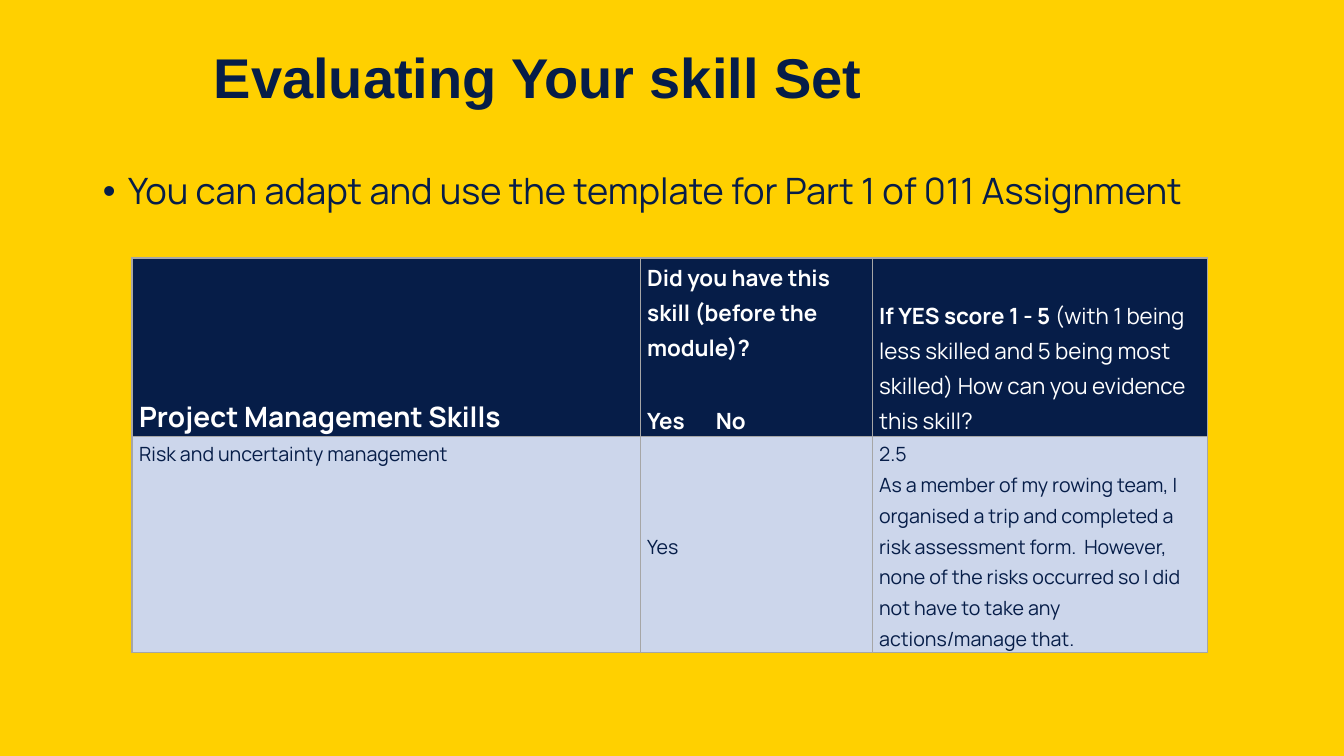
from lxml import etree
from pptx import Presentation
from pptx.dml.color import RGBColor
from pptx.enum.text import MSO_ANCHOR, MSO_AUTO_SIZE, PP_ALIGN
from pptx.oxml.ns import qn
from pptx.util import Inches, Pt

TOP, MIDDLE, BOTTOM = MSO_ANCHOR.TOP, MSO_ANCHOR.MIDDLE, MSO_ANCHOR.BOTTOM
LEFT = PP_ALIGN.LEFT
NO_FIT = MSO_AUTO_SIZE.NONE

COLORS = {
    "background": "FFD000",
    "navy": "061D48",
    "body": "071D49",
    "white": "FFFFFF",
    "row": "CCD6EB",
    "border": "A6A6A6",
}

# Each cell: anchor, size, paragraphs; each paragraph: (text, bold) runs
HEADER = [
    (BOTTOM, 20, [[("Project Management Skills", True)]]),
    (BOTTOM, 16, [[("Did you have this skill (before the module)?", True)],
                  [("Yes\tNo", True)]]),
    (BOTTOM, 16, [[("If YES score 1 - 5 ", True),
                   ("(with 1 being less skilled and 5 being most skilled) "
                    "How can you evidence this skill?", False)]]),
]
RISK_ROW = [
    (TOP, 14, [[("Risk and uncertainty management", False)]]),
    (MIDDLE, 14, [[("Yes", False)]]),
    (MIDDLE, 14, [[("2.5", False)],
                  [("As a member of my rowing team, I organised a trip and "
                    "completed a risk assessment form.  However, none of the "
                    "risks occurred so I did not have to take any "
                    "actions/manage that.", False)]]),
]


def rgb(name):
    return RGBColor.from_string(COLORS[name])


class SlideBuilder:
    """Holds the current slide and the style of its elements."""

    title_font = "Arial"
    text_font = "Manrope"

    def __init__(self, s):
        self.s = s
        s.background.fill.solid()
        s.background.fill.fore_color.rgb = rgb("background")

    def style(self, r, font, size, color, bold=False):
        r.font.name = font
        r.font.size = Pt(size)
        r.font.bold = bold
        r.font.color.rgb = rgb(color)

    def placeholder(self, sp, text, box, anchor):
        """Move and fill a placeholder; return its paragraph."""
        sp.left, sp.top, sp.width, sp.height = map(Inches, box)
        tf = sp.text_frame
        tf.text = text
        tf.auto_size = NO_FIT
        tf.vertical_anchor = anchor
        p = tf.paragraphs[0]
        p.alignment = LEFT
        p.line_spacing = 0.9
        p.space_before = Pt(0)
        return p

    def title(self, text, box):
        p = self.placeholder(self.s.shapes.title, text, box, MIDDLE)
        self.style(p.runs[0], self.title_font, 40, "navy", True)

    def bullet(self, text, box):
        p = self.placeholder(self.s.placeholders[1], text, box, TOP)
        pPr = p._p.get_or_add_pPr()
        pPr.set("marL", str(Inches(0.25)))
        pPr.set("indent", str(Inches(-0.25)))
        etree.SubElement(pPr, qn("a:buFont"), typeface="Arial")
        etree.SubElement(pPr, qn("a:buChar"), char="•")
        self.style(p.runs[0], self.text_font, 25.9, "body")

    def borders(self, cell):
        tcPr = cell._tc.get_or_add_tcPr()
        for side in ("lnL", "lnR", "lnT", "lnB"):
            ln = etree.SubElement(tcPr, qn(f"a:{side}"), w=str(Pt(1)))
            fill = etree.SubElement(ln, qn("a:solidFill"))
            etree.SubElement(fill, qn("a:srgbClr"), val=COLORS["border"])

    def tab_stop(self, p, position):
        tabs = etree.SubElement(p._p.get_or_add_pPr(), qn("a:tabLst"))
        etree.SubElement(tabs, qn("a:tab"), pos=str(Inches(position)), algn="l")

    def cell(self, cell, content, fill, color):
        anchor, size, paragraphs = content
        self.borders(cell)
        cell.fill.solid()
        cell.fill.fore_color.rgb = rgb(fill)
        cell.vertical_anchor = anchor
        cell.margin_left = cell.margin_right = Inches(0.07)
        cell.margin_top = cell.margin_bottom = 0
        tf = cell.text_frame
        for i, runs in enumerate(paragraphs):
            p = tf.add_paragraph() if i else tf.paragraphs[0]
            p.line_spacing = 1.15
            if "\t" in runs[0][0]:
                p.space_before = Pt(27)
                self.tab_stop(p, 0.68)
            for text, bold in runs:
                r = p.add_run()
                r.text = text
                self.style(r, self.text_font, size, color, bold)

    def table(self, left, top, widths, row_height, rows):
        """Draw rows given as (cells, fill, text colour)."""
        frame = self.s.shapes.add_table(
            len(rows), len(widths), Inches(left), Inches(top),
            Inches(sum(widths)), Inches(row_height * len(rows)))
        table = frame.table
        table.horz_banding = False
        for column, width in zip(table.columns, widths):
            column.width = Inches(width)
        for i, (cells, fill, color) in enumerate(rows):
            for j, content in enumerate(cells):
                self.cell(table.cell(i, j), content, fill, color)


def main():
    prs = Presentation()
    prs.slide_width, prs.slide_height = Inches(13.33), Inches(7.5)
    slide = SlideBuilder(prs.slides.add_slide(prs.slide_layouts[1]))
    slide.title("Evaluating Your skill Set", (2.02, 0.07, 9.82, 1.45))
    slide.bullet("You can adapt and use the template for Part 1 of 011 Assignment",
                 (0.92, 1.67, 11.5, 0.65))
    slide.table(1.31, 2.56, (5.04, 2.3, 3.33), 1.72,
                [(HEADER, "navy", "white"), (RISK_ROW, "row", "navy")])
    prs.save("out.pptx")


if __name__ == "__main__":
    main()
